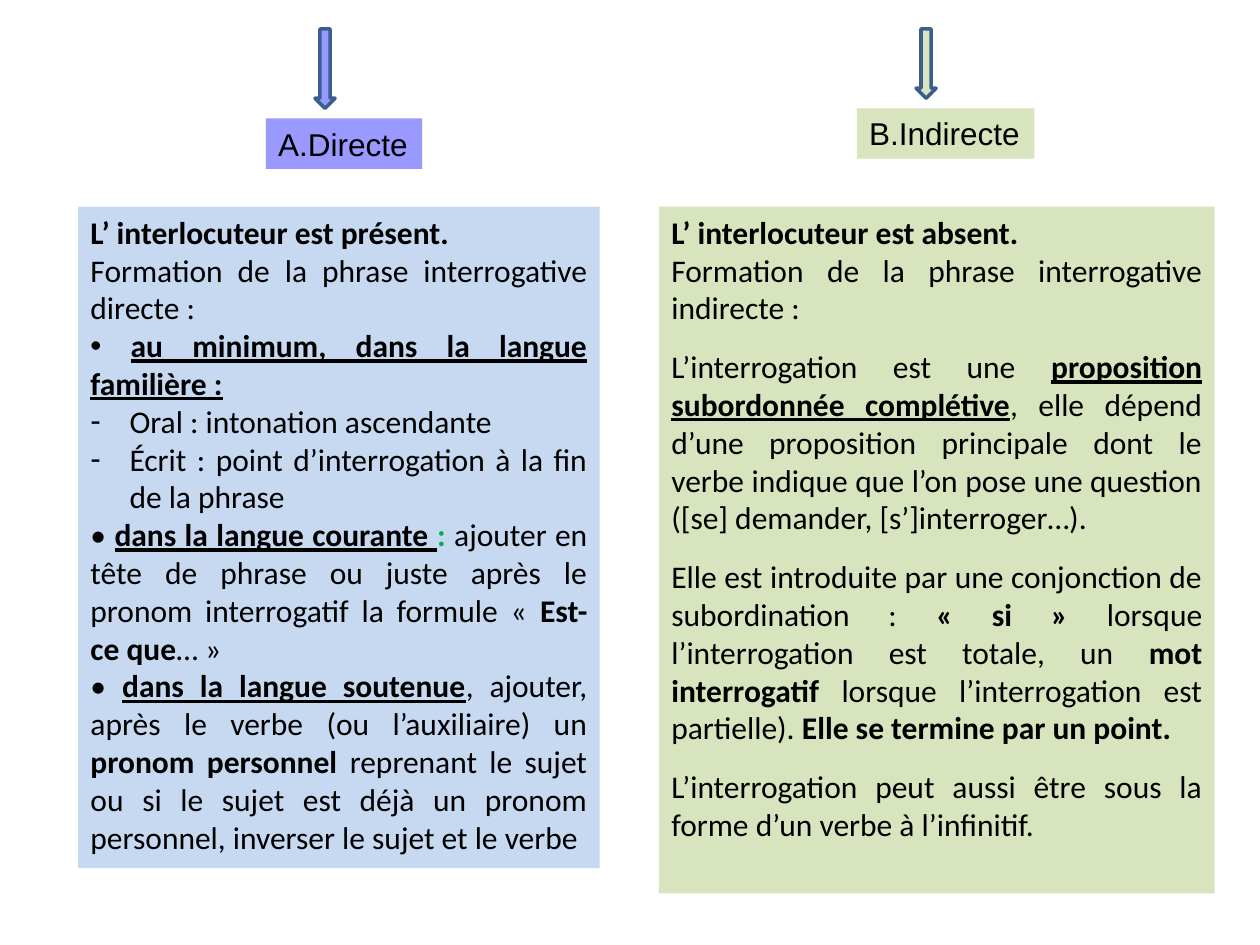
from pptx import Presentation
from pptx.dml.color import RGBColor
from pptx.enum.shapes import MSO_SHAPE
from pptx.enum.text import MSO_ANCHOR, MSO_AUTO_SIZE, PP_ALIGN
from pptx.oxml.ns import qn
from pptx.util import Inches, Pt
from lxml import etree

RECT, ARROW = MSO_SHAPE.RECTANGLE, MSO_SHAPE.DOWN_ARROW
LEFT, JUST = PP_ALIGN.LEFT, PP_ALIGN.JUSTIFY
GROW, TOP = MSO_AUTO_SIZE.SHAPE_TO_FIT_TEXT, MSO_ANCHOR.TOP

THEME = {
    "violet": "9999FF", "blue": "C6D9F1", "green": "D7E4BD",
    "edge": "3A5F8C", "ink": "000000", "mark": "00B050",
    "head": "Arial", "body": "Calibri", "size": 18, "gap": 12, "line": 2,
}

# Run styles
PLAIN = {"bold": False, "underline": False}
BOLD = {"bold": True, "underline": False}
KEY = {"bold": True, "underline": True}
MARK = {"bold": True, "underline": False, "color": "mark"}

# Each paragraph: (format, runs)
FLAT, DOT = {}, {"bullet": "•"}
DASH = {"bullet": "-", "indent": 0.31}
GAP = {"before": THEME["gap"]}

DIRECT = [
    (FLAT, [("L’ interlocuteur est présent.", BOLD)]),
    (FLAT, [("Formation de la phrase interrogative directe :", PLAIN)]),
    (DOT, [(" ", PLAIN), ("au minimum, dans la langue familière :", KEY)]),
    (DASH, [("Oral : intonation ascendante", PLAIN)]),
    (DASH, [("Écrit : point d’interrogation à la fin de la phrase", PLAIN)]),
    (FLAT, [("• ", PLAIN), ("dans la langue courante ", KEY), (": ", MARK),
            ("ajouter en tête de phrase ou juste après le pronom "
             "interrogatif la formule « ", PLAIN),
            ("Est-ce que", BOLD), ("… »", PLAIN)]),
    (FLAT, [("• ", PLAIN), ("dans la langue soutenue", KEY),
            (", ajouter, après le verbe (ou l’auxiliaire) un ", PLAIN),
            ("pronom personnel", BOLD),
            (" reprenant le sujet ou si le sujet est déjà un pronom "
             "personnel, inverser le sujet et le verbe", PLAIN)]),
]
INDIRECT = [
    (FLAT, [("L’ interlocuteur est absent.", BOLD)]),
    (FLAT, [("Formation de la phrase interrogative indirecte :", PLAIN)]),
    (GAP, [("L’interrogation est une ", PLAIN),
           ("proposition subordonnée complétive", KEY),
           (", elle dépend d’une proposition principale dont le verbe indique "
            "que l’on pose une question ([se] demander, [s’]interroger…).",
            PLAIN)]),
    (GAP, [("Elle est introduite par une conjonction de subordination : ",
            PLAIN),
           ("« si » ", BOLD),
           ("lorsque l’interrogation est totale, un ", PLAIN),
           ("mot interrogatif ", BOLD),
           ("lorsque l’interrogation est partielle). ", PLAIN),
           ("Elle se termine par un point.", BOLD)]),
    (GAP, [("L’interrogation peut aussi être sous la forme d’un verbe "
            "à l’infinitif.", PLAIN)]),
]

# Columns: places are left, top, width, height
COLUMNS = [
    {"title": "A.Directe", "tint": "violet", "fill": "blue", "text": DIRECT,
     "arrow": (2.5, 0.23, 0.16, 0.63), "label": (2.11, 0.94, 1.24, 0.4),
     "panel": (0.62, 1.64, 4.14, 5.25)},
    {"title": "B.Indirecte", "tint": "green", "fill": "green",
     "text": INDIRECT,
     "arrow": (7.27, 0.23, 0.16, 0.55), "label": (6.8, 0.86, 1.41, 0.4),
     "panel": (5.23, 1.64, 4.41, 5.45)},
]


def tone(name):
    return RGBColor.from_string(THEME[name])


def add_form(slide, kind, place, fill):
    form = slide.shapes.add_shape(kind, *map(Inches, place))
    form.shadow.inherit = False
    form.fill.solid()
    form.fill.fore_color.rgb = tone(fill)
    form.line.fill.background()
    return form


def add_bullet(para, mark, indent):
    props = para._p.get_or_add_pPr()
    props.set("marL", str(Inches(indent)))
    props.set("indent", str(-Inches(indent)))
    etree.SubElement(props, qn("a:buFont")).set("typeface", THEME["head"])
    etree.SubElement(props, qn("a:buChar")).set("char", mark)


def add_run(para, text, font, style):
    run = para.add_run()
    run.text = text
    look = {"name": THEME[font], "size": Pt(THEME["size"]),
            "bold": style["bold"], "underline": style["underline"]}
    for key, value in look.items():
        setattr(run.font, key, value)
    run.font.color.rgb = tone(style.get("color", "ink"))


def add_text(form, paras, font, align, wrap):
    frame = form.text_frame
    look = {"word_wrap": wrap, "auto_size": GROW, "vertical_anchor": TOP}
    for key, value in look.items():
        setattr(frame, key, value)
    for i, (shape, runs) in enumerate(paras):
        para = frame.add_paragraph() if i else frame.paragraphs[0]
        para.alignment = align
        if "before" in shape:
            para.space_before = Pt(shape["before"])
        if "bullet" in shape:
            add_bullet(para, shape["bullet"], shape.get("indent", 0))
        for text, style in runs:
            add_run(para, text, font, style)


def main():
    deck = Presentation()
    deck.slide_width, deck.slide_height = Inches(10), Inches(7.5)
    slide = deck.slides.add_slide(deck.slide_layouts[6])

    for col in COLUMNS:
        # Arrow
        arrow = add_form(slide, ARROW, col["arrow"], col["tint"])
        arrow.line.color.rgb = tone("edge")
        arrow.line.width = Pt(THEME["line"])
        # Label
        label = add_form(slide, RECT, col["label"], col["tint"])
        add_text(label, [(FLAT, [(col["title"], PLAIN)])], "head", LEFT, False)
        # Panel
        panel = add_form(slide, RECT, col["panel"], col["fill"])
        add_text(panel, col["text"], "body", JUST, True)

    deck.save("out.pptx")


if __name__ == "__main__":
    main()
